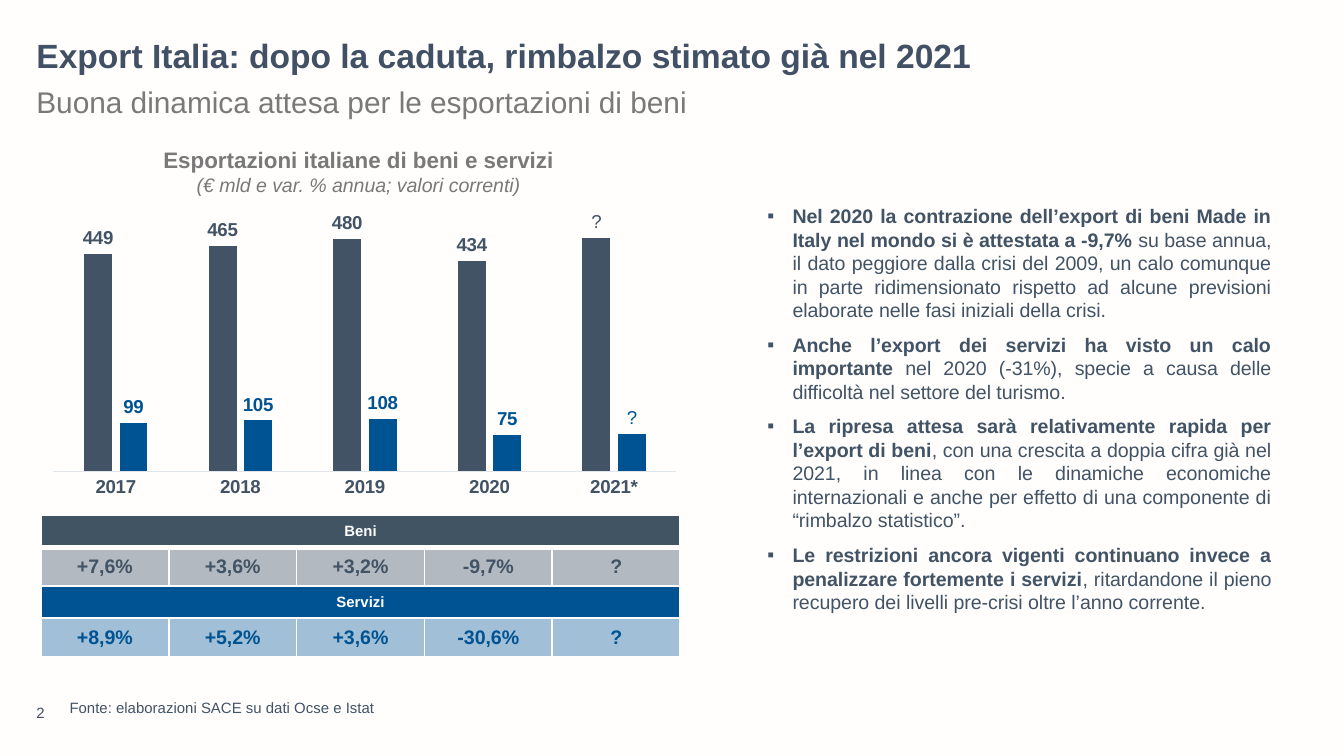
from dataclasses import dataclass

from lxml import etree
from pptx import Presentation
from pptx import util as u
from pptx.chart import data as chart_data
from pptx.dml.color import RGBColor
from pptx.enum import chart as charts, text
from pptx.oxml import ns


@dataclass(frozen=True)
class Theme:
    font: str = "Arial"
    paper: str = "FFFEFD"
    title: str = "415064"
    slate: str = "415364"
    header: str = "415464"
    blue: str = "005392"
    grey: str = "797979"
    pale_slate: str = "B3B9C0"
    pale_blue: str = "A1BFD6"
    axis: str = "E0E5EB"
    title_size: float = 18
    subtitle_size: float = 16
    heading_size: float = 12
    body_size: float = 10.5
    chart_size: float = 10
    small_size: float = 8


theme = Theme()
rgb = RGBColor.from_string


def style(font, size, color, bold=False, italic=False):
    font.name = theme.font
    font.size = u.Pt(size)
    font.color.rgb = rgb(color)
    font.bold = bold
    font.italic = italic


def add_box(left, top, width, height, paragraphs, inset=True):
    box = page.shapes.add_textbox(u.Pt(left), u.Pt(top), u.Pt(width), u.Pt(height))
    frame = box.text_frame
    frame.word_wrap = True
    if not inset:
        frame.margin_left = frame.margin_top = frame.margin_right = frame.margin_bottom = 0
    for number, runs in enumerate(paragraphs):
        para = frame.add_paragraph() if number else frame.paragraphs[0]
        for words, *look in runs:
            span = para.add_run()
            span.text = words
            style(span.font, *look)
    return frame


deck = Presentation()
deck.slide_width, deck.slide_height = u.Pt(720), u.Pt(405)
page = deck.slides.add_slide(deck.slide_layouts[6])
page.background.fill.solid()
page.background.fill.fore_color.rgb = rgb(theme.paper)

number_format = '_-* #,##0_-;\\-* #,##0_-;_-* "-"??_-;_-@_'
exports = chart_data.CategoryChartData(number_format=number_format)
exports.categories = ["2017", "2018", "2019", "2020", "2021*"]
exports.add_series("Series 1", [449, 465, 480, 434, 482])
exports.add_series("Series 2", [99, 105, 108, 75, 78])
chart = page.shapes.add_chart(
    charts.XL_CHART_TYPE.COLUMN_CLUSTERED,
    u.Pt(18), u.Pt(77), u.Pt(355), u.Pt(199.5), exports,
).chart
chart.has_legend = False
chart.has_title = False
style(chart.font, theme.chart_size, theme.slate)

value_axis = chart.value_axis
value_axis.minimum_scale, value_axis.maximum_scale = 0, 600
value_axis.has_major_gridlines = False
value_axis.visible = False
value_axis.tick_labels.number_format = number_format
value_axis.tick_labels.number_format_is_linked = False
year_axis = chart.category_axis
year_axis.major_tick_mark = charts.XL_TICK_MARK.NONE
year_axis.format.line.color.rgb = rgb(theme.axis)
year_axis.format.line.width = u.Pt(0.75)
style(year_axis.tick_labels.font, theme.chart_size, theme.slate, True)

plot = chart.plots[0]
plot.gap_width, plot.overlap = 219, -27
plot.vary_by_categories = False
for series, color in zip(plot.series, (theme.slate, theme.blue)):
    series.invert_if_negative = False
    series.format.fill.solid()
    series.format.fill.fore_color.rgb = rgb(color)
    labels = series.data_labels
    labels.show_value = True
    labels.position = charts.XL_LABEL_POSITION.OUTSIDE_END
    labels.number_format = number_format
    labels.number_format_is_linked = False
    style(labels.font, theme.chart_size, color, True)
    unknown = series.points[4].data_label
    span = unknown.text_frame.paragraphs[0].add_run()
    span.text = "?"
    style(span.font, theme.chart_size, color)
    unknown.position = charts.XL_LABEL_POSITION.OUTSIDE_END

plot_area = chart.element.find(".//" + ns.qn("c:plotArea"))
for default_layout in plot_area.findall(ns.qn("c:layout")):
    plot_area.remove(default_layout)
layout = etree.Element(ns.qn("c:layout"))
manual = etree.SubElement(layout, ns.qn("c:manualLayout"))
for tag, value in (
    ("layoutTarget", "inner"), ("xMode", "edge"), ("yMode", "edge"),
    ("x", "0.03"), ("y", "0.1"), ("w", "0.94"), ("h", "0.78"),
):
    etree.SubElement(manual, ns.qn("c:" + tag), val=value)
plot_area.insert(0, layout)

add_box(30.2, 370.8, 288, 17.3, [
    [("Fonte: elaborazioni SACE su dati Ocse e Istat", theme.small_size, theme.slate)],
])

comments = [
    ("Nel 2020 la contrazione dell’export di beni Made in Italy nel mondo si è attestata a -9,7% ",
     "su base annua, il dato peggiore dalla crisi del 2009, un calo comunque in parte "
     "ridimensionato rispetto ad alcune previsioni elaborate nelle fasi iniziali della crisi."),
    ("Anche l’export dei servizi ha visto un calo importante ",
     "nel 2020 (-31%), specie a causa delle difficoltà nel settore del turismo."),
    ("La ripresa attesa sarà relativamente rapida per l’export di beni",
     ", con una crescita a doppia cifra già nel 2021, in linea con le dinamiche economiche "
     "internazionali e anche per effetto di una componente di “rimbalzo statistico”."),
    ("Le restrizioni ancora vigenti continuano invece a penalizzare fortemente i servizi",
     ", ritardandone il pieno recupero dei livelli pre-crisi oltre l’anno corrente."),
]
commentary = add_box(404, 105.8, 284.4, 247.7, [
    [(lead, theme.body_size, theme.slate, True), (rest, theme.body_size, theme.slate)]
    for lead, rest in comments
])
for para in commentary.paragraphs:
    para.alignment = text.PP_ALIGN.JUSTIFY
    para.space_after = u.Pt(6)
    properties = para._p.get_or_add_pPr()
    properties.set("marL", str(u.Pt(13.5)))
    properties.set("indent", str(-u.Pt(13.5)))
    etree.SubElement(properties, ns.qn("a:buFont"), typeface=theme.font)
    etree.SubElement(properties, ns.qn("a:buChar"), char="▪")

heading = add_box(12.2, 74.9, 360, 34.6, [
    [("Esportazioni italiane di beni e servizi", theme.heading_size, theme.grey, True)],
    [("(€ mld e var. % annua; valori correnti)", theme.body_size, theme.grey, False, True)],
])
for para in heading.paragraphs:
    para.alignment = text.PP_ALIGN.CENTER

page_number = add_box(19.5, 372.2, 79.2, 14.4, [[("2", theme.small_size, theme.title)]], inset=False)
page_number.vertical_anchor = text.MSO_ANCHOR.BOTTOM

rows = [
    (["Beni"], 17.3, theme.header, theme.paper, theme.small_size),
    (["+7,6%", "+3,6%", "+3,2%", "-9,7%", "?"], 20.5, theme.pale_slate, theme.slate, theme.body_size),
    (["Servizi"], 17.3, theme.blue, theme.paper, theme.small_size),
    (["+8,9%", "+5,2%", "+3,6%", "-30,6%", "?"], 20.5, theme.pale_blue, theme.blue, theme.body_size),
]
table = page.shapes.add_table(4, 5, u.Pt(21.9), u.Pt(276.1), u.Pt(342.5), u.Pt(75.6)).table
table.first_row = table.horz_banding = False
for column in table.columns:
    column.width = u.Pt(68.5)
for index, (words, height, fill, color, size) in enumerate(rows):
    table.rows[index].height = u.Pt(height)
    for cell in table.rows[index].cells:
        properties = cell._tc.get_or_add_tcPr()
        for side in ("lnL", "lnR", "lnT", "lnB"):
            weight = 3 if index == 0 and side == "lnB" else 1
            border = etree.SubElement(properties, ns.qn("a:" + side), w=str(u.Pt(weight)))
            paint = etree.SubElement(border, ns.qn("a:solidFill"))
            etree.SubElement(paint, ns.qn("a:srgbClr"), val=theme.paper)
        cell.fill.solid()
        cell.fill.fore_color.rgb = rgb(fill)
        cell.vertical_anchor = text.MSO_ANCHOR.MIDDLE
    if len(words) == 1:
        table.cell(index, 0).merge(table.cell(index, 4))
    for column, word in enumerate(words):
        para = table.cell(index, column).text_frame.paragraphs[0]
        para.alignment = text.PP_ALIGN.CENTER
        span = para.add_run()
        span.text = word
        style(span.font, size, color, True)

for top, width, words, size, color, bold in (
    (20.9, 687.6, "Export Italia: dopo la caduta, rimbalzo stimato già nel 2021",
     theme.title_size, theme.title, True),
    (46.8, 596.9, "Buona dinamica attesa per le esportazioni di beni",
     theme.subtitle_size, theme.grey, False),
):
    title = add_box(19.5, top, width, 22.3, [[(words, size, color, bold)]], inset=False)
    title.paragraphs[0].line_spacing = 0.9

deck.save("out.pptx")
